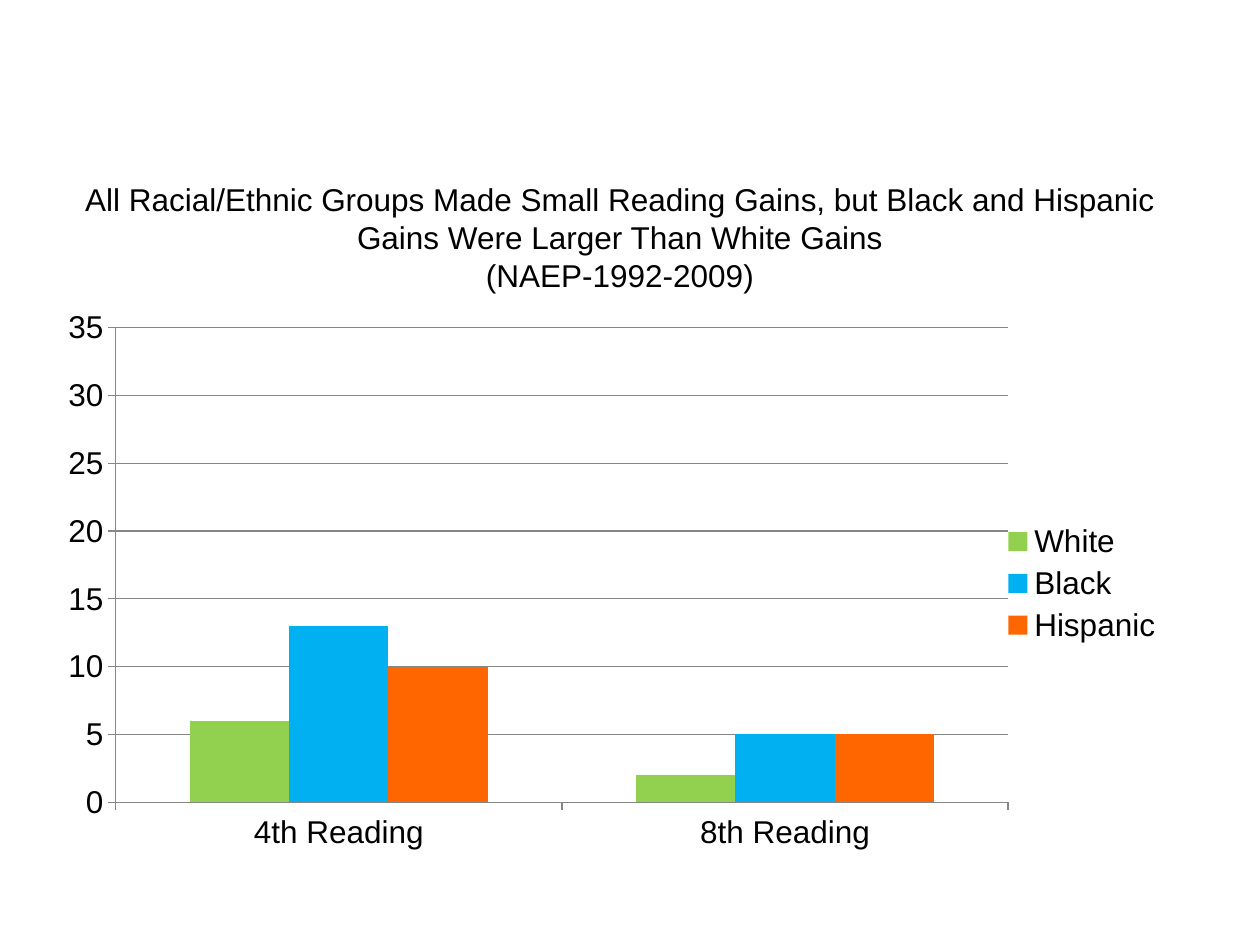
from dataclasses import dataclass

from lxml import etree
from pptx import Presentation
from pptx import util as u
from pptx.chart.data import CategoryChartData
from pptx.dml.color import RGBColor
from pptx.enum import chart as ch
from pptx.enum import text
from pptx.oxml.ns import qn


@dataclass(frozen=True)
class Theme:
    font: str = "Arial"
    size: int = 18
    ink: str = "000000"
    grid: str = "868686"
    paper: str = "FFFFFF"


THEME = Theme()
TITLE = [
    "All Racial/Ethnic Groups Made Small Reading Gains, but Black and Hispanic "
    "Gains Were Larger Than White Gains",
    "(NAEP-1992-2009)",
]
GRADES = ["4th Reading", "8th Reading"]
GAINS = [
    ("White", (6, 2), "92D050"),
    ("Black", (13, 5), "00B0F0"),
    ("Hispanic", (10, 5), "FF6600"),
]
PLOT = {"x": 0.065, "y": 0.041, "w": 0.787, "h": 0.852}


def px(n):
    return u.Emu(round(n * u.Inches(1) / 126))


def style(font):
    font.name = THEME.font
    font.size = u.Pt(THEME.size)
    font.bold = False
    font.color.rgb = RGBColor.from_string(THEME.ink)


def add_title(slide, box):
    frame = slide.shapes.add_textbox(*map(px, box)).text_frame
    frame.word_wrap = True
    frame.vertical_anchor = text.MSO_ANCHOR.MIDDLE
    frame.text = "\n".join(TITLE)
    for para in frame.paragraphs:
        para.alignment = text.PP_ALIGN.CENTER
        for run in para.runs:
            style(run.font)


def set_plot(chart):
    """Fix the inner plot area as fractions of the chart."""
    area = chart.plots[0]._element.getparent()
    layout = area.find(qn("c:layout"))
    if layout is None:
        layout = etree.Element(qn("c:layout"))
        area.insert(0, layout)
    manual = etree.SubElement(layout, qn("c:manualLayout"))
    parts = {"layoutTarget": "inner", "xMode": "edge", "yMode": "edge", **PLOT}
    for name, val in parts.items():
        etree.SubElement(manual, qn(f"c:{name}")).set("val", str(val))


def add_gains(slide, box):
    data = CategoryChartData(number_format="0")
    data.categories = GRADES
    for name, vals, _ in GAINS:
        data.add_series(name, vals)
    kind = ch.XL_CHART_TYPE.COLUMN_CLUSTERED
    chart = slide.shapes.add_chart(kind, *map(px, box), data).chart
    chart.has_title = False
    style(chart.font)
    set_plot(chart)

    plot = chart.plots[0]
    plot.vary_by_categories = False
    plot.gap_width = 150
    plot.overlap = 0
    for series, (_, _, color) in zip(plot.series, GAINS):
        series.format.fill.solid()
        series.format.fill.fore_color.rgb = RGBColor.from_string(color)

    scale = chart.value_axis
    scale.minimum_scale, scale.maximum_scale, scale.major_unit = 0, 35, 5
    scale.has_major_gridlines = True
    chart.category_axis.has_major_gridlines = False
    for part in (scale, chart.category_axis, scale.major_gridlines):
        part.format.line.width = u.Pt(0.75)
        part.format.line.color.rgb = RGBColor.from_string(THEME.grid)
    for axis in (scale, chart.category_axis):
        axis.major_tick_mark = ch.XL_TICK_MARK.OUTSIDE
        axis.minor_tick_mark = ch.XL_TICK_MARK.NONE

    chart.has_legend = True
    chart.legend.position = ch.XL_LEGEND_POSITION.RIGHT
    chart.legend.include_in_layout = False


def main():
    deck = Presentation()
    deck.slide_width, deck.slide_height = px(1260), px(945)
    slide = deck.slides.add_slide(deck.slide_layouts[6])
    fill = slide.background.fill
    fill.solid()
    fill.fore_color.rgb = RGBColor.from_string(THEME.paper)
    add_title(slide, (53, 158, 1134, 158))
    add_gains(slide, (42, 305, 1134, 557))
    deck.save("out.pptx")


if __name__ == "__main__":
    main()
